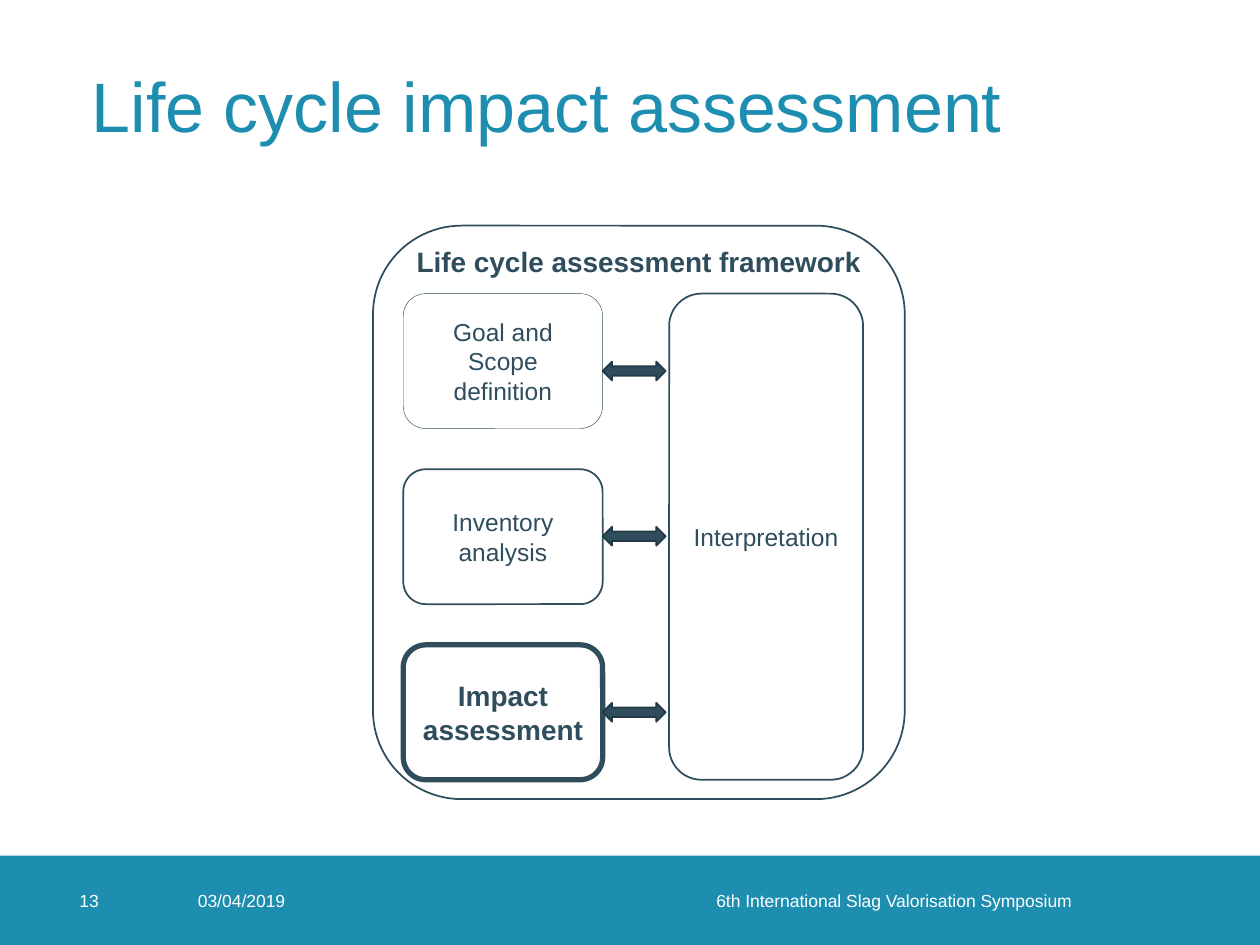
"""Build the life cycle impact assessment slide."""
from pptx import Presentation
from pptx.dml.color import RGBColor
from pptx.enum.shapes import MSO_SHAPE
from pptx.enum.text import MSO_ANCHOR, PP_ALIGN
from pptx.util import Cm, Pt

BLUE, SLATE, DARK, WHITE = "1D8DB0", "2F4D5D", "233945", "FFFFFF"
TITLE = "Life cycle impact assessment"
HEADING = "Life cycle assessment framework"
PHASES = [
    ("Goal and Scope definition", 14, False, 0.25),
    ("Inventory analysis", 14, False, 1),
    ("Impact assessment", 16, True, 3),
]
ARROW_TOPS = [7.29, 10.62, 14.17]
FOOTER = [
    ("03/04/2019", 3.99, 2.01, PP_ALIGN.LEFT, 0),
    ("6th International Slag Valorisation Symposium", 11.94, 10.26, PP_ALIGN.RIGHT, 0.6),
    ("13", 1.6, 1.8, PP_ALIGN.LEFT, 0),
]
BAND_TOP, BAND_HEIGHT = 17.25, 1.8
PHASE_LEFT, PHASE_TOP, PHASE_WIDTH, PHASE_HEIGHT = 8.13, 5.92, 4.02, 2.72
PHASE_STEP = 3.54


def color(value):
    return RGBColor.from_string(value)


def write(box, text, size, ink, bold=False, align=PP_ALIGN.LEFT):
    frame = box.text_frame
    frame.word_wrap = True
    frame.vertical_anchor = MSO_ANCHOR.MIDDLE
    para = frame.paragraphs[0]
    para.text = text
    para.alignment = align
    font = para.runs[0].font
    font.name, font.size, font.bold = "Arial", Pt(size), bold
    font.color.rgb = color(ink)
    return para


def add_text(page, place, *args, **options):
    box = page.shapes.add_textbox(*map(Cm, place))
    return box, write(box, *args, **options)


def add_shape(page, kind, place, fill=None, line=None, width=1):
    shape = page.shapes.add_shape(kind, *map(Cm, place))
    shape.shadow.inherit = False
    if fill:
        shape.fill.solid()
        shape.fill.fore_color.rgb = color(fill)
    else:
        shape.fill.background()
    if line:
        shape.line.color.rgb = color(line)
        shape.line.width = Pt(width)
    else:
        shape.line.fill.background()
    return shape


def add_footer(page):
    add_shape(page, MSO_SHAPE.RECTANGLE, (0, BAND_TOP, 25.4, BAND_HEIGHT), BLUE)
    for text, left, width, align, right_inset in FOOTER:
        place = (left, BAND_TOP, width, BAND_HEIGHT)
        box, _ = add_text(page, place, text, 10, WHITE, align=align)
        frame = box.text_frame
        frame.margin_left = frame.margin_top = frame.margin_bottom = 0
        frame.margin_right = Cm(right_inset)


def add_framework(page):
    rounded = MSO_SHAPE.ROUNDED_RECTANGLE
    for index, (text, size, bold, width) in enumerate(PHASES):
        place = (PHASE_LEFT, PHASE_TOP + index * PHASE_STEP, PHASE_WIDTH, PHASE_HEIGHT)
        phase = add_shape(page, rounded, place, line=SLATE, width=width)
        write(phase, text, size, SLATE, bold, PP_ALIGN.CENTER)
    height = PHASE_STEP * (len(PHASES) - 1) + PHASE_HEIGHT
    interpretation = add_shape(page, rounded, (13.49, PHASE_TOP, 3.91, height), line=SLATE)
    write(interpretation, "Interpretation", 14, SLATE, align=PP_ALIGN.CENTER)
    for top in ARROW_TOPS:
        place = (PHASE_LEFT + PHASE_WIDTH, top, 1.27, 0.38)
        add_shape(page, MSO_SHAPE.LEFT_RIGHT_ARROW, place, SLATE, DARK)
    add_shape(page, rounded, (7.52, 4.55, 10.72, 11.56), line=SLATE)
    add_text(page, (8.15, 4.8, 9.7, 0.94), HEADING, 16, SLATE, bold=True)


def main():
    deck = Presentation()
    deck.slide_width, deck.slide_height = Cm(25.4), Cm(19.05)
    page = deck.slides.add_slide(deck.slide_layouts[6])
    add_footer(page)
    _, title = add_text(page, (1.6, 0.61, 22.2, 3.2), TITLE, 40, BLUE)
    title.line_spacing = 0.9
    add_framework(page)
    deck.save("out.pptx")


if __name__ == "__main__":
    main()
